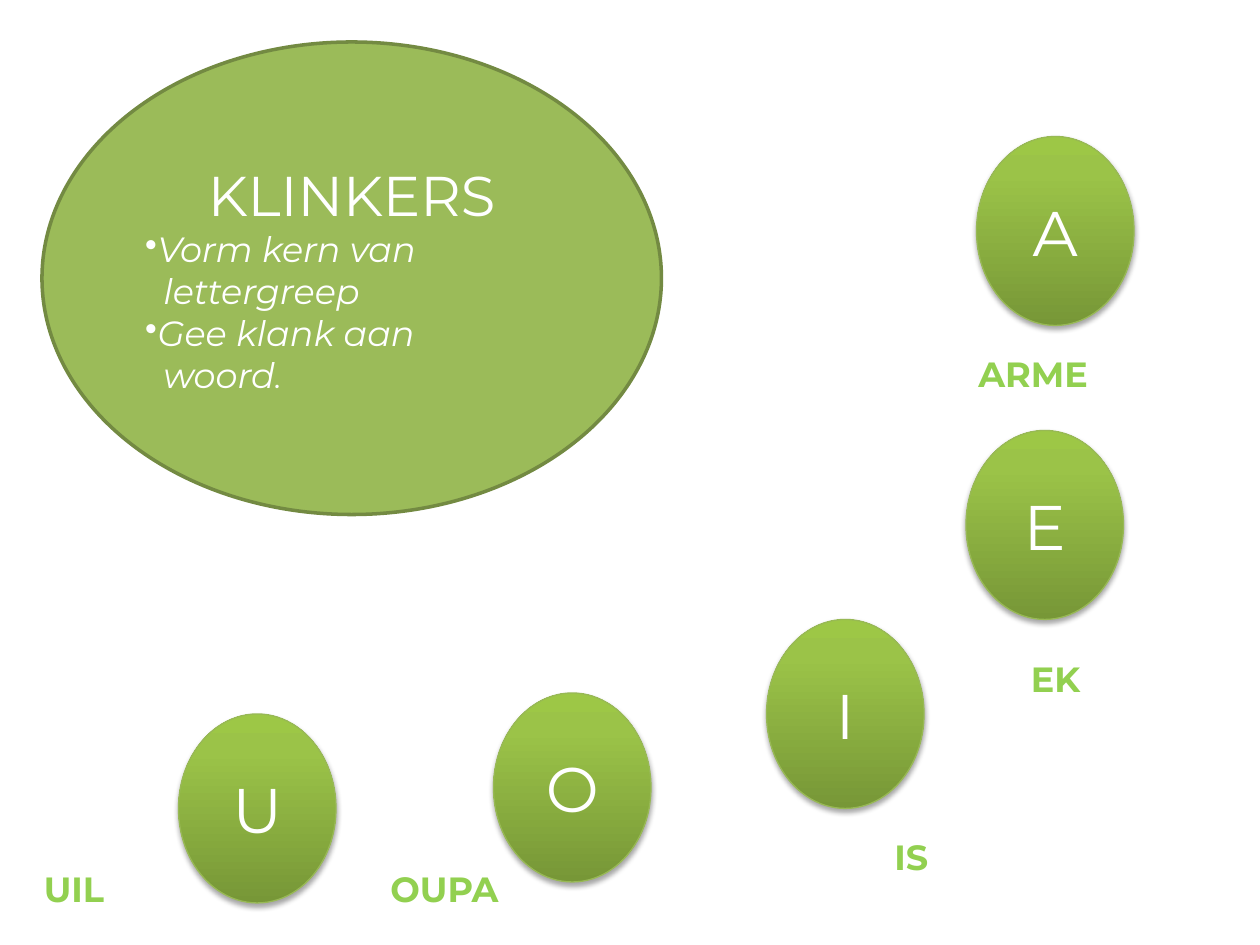
from lxml import etree
from pptx import Presentation
from pptx.dml.color import RGBColor
from pptx.enum import shapes, text
from pptx.oxml import ns, parse_xml
from pptx.util import Pt

COLORS = {
    "oval": "9BBB59", "oval_line": "738A42", "ball_line": "98B955",
    "white": "FFFFFF", "word": "92D050", "shadow": "000000",
    "dark": "779737", "mid": "9BC348", "light": "9DC746",
}
FONT = "Montserrat"
BALL_W, BALL_H = 90, 108
WORD_H = 31.5

# letter, left, top of its ball; word, left, top, width of its label
VOWELS = [
    ("A", 558, 78, "ARME", 552, 198, 96),
    ("E", 552, 246, "EK", 582, 372, 48),
    ("I", 438, 354, "IS", 504, 474, 42),
    ("O", 282, 396, "OUPA", 216, 492, 90),
    ("U", 102, 408, "UIL", 18, 492, 72),
]


def rgb(name):
    return RGBColor.from_string(COLORS[name])


def add_text(p, words, size=20, color="white", bold=False, italic=False,
             align=text.PP_ALIGN.LEFT):
    p.alignment = align
    r = p.add_run()
    r.text = words
    r.font.name, r.font.size = FONT, Pt(size)
    r.font.bold, r.font.italic = bold, italic
    r.font.color.rgb = rgb(color)


def add_bullet(p):
    bullet = etree.SubElement(p._p.get_or_add_pPr(), ns.qn("a:buChar"))
    bullet.set("char", "•")


def add_oval(s, kind, box, line, width):
    sp = s.shapes.add_shape(kind, *map(Pt, box))
    sp.line.color.rgb = rgb(line)
    sp.line.width = Pt(width)
    sp.shadow.inherit = False
    tf = sp.text_frame
    tf.word_wrap = True
    tf.vertical_anchor = text.MSO_ANCHOR.MIDDLE
    return sp


def add_heading(s, box):
    sp = add_oval(s, shapes.MSO_SHAPE.OVAL, box, "oval_line", 2)
    sp.fill.solid()
    sp.fill.fore_color.rgb = rgb("oval")
    tf = sp.text_frame
    add_text(tf.paragraphs[0], "KLINKERS", size=32, align=text.PP_ALIGN.CENTER)
    for first, second, stop in (("Vorm kern van", "lettergreep", ""),
                                ("Gee klank aan", "woord", ".")):
        p = tf.add_paragraph()
        add_text(p, first, italic=True)
        add_bullet(p)
        p = tf.add_paragraph()
        add_text(p, second, italic=True)
        p._p.get_or_add_pPr().set("marL", str(Pt(10.5)))
        if stop:
            add_text(p, stop, size=18, italic=True)


def add_gradient(sp):
    sp.fill.gradient()
    sp.fill.gradient_angle = 90
    stops = sp._element.spPr.find(ns.qn("a:gradFill")).find(ns.qn("a:gsLst"))
    for stop in list(stops):
        stops.remove(stop)
    for pos, name in ((0, "dark"), (80, "mid"), (100, "light")):
        stop = etree.SubElement(stops, ns.qn("a:gs"), pos=str(pos * 1000))
        etree.SubElement(stop, ns.qn("a:srgbClr"), val=COLORS[name])


def add_shadow(sp):
    effects = sp._element.spPr.find(ns.qn("a:effectLst"))
    effects.append(parse_xml(
        f'<a:outerShdw {ns.nsdecls("a")} blurRad="{Pt(3.1)}" dist="{Pt(1.8)}" '
        f'dir="5400000" rotWithShape="0"><a:srgbClr val="{COLORS["shadow"]}">'
        '<a:alpha val="35000"/></a:srgbClr></a:outerShdw>'))


def add_ball(s, box, letter):
    sp = add_oval(s, shapes.MSO_SHAPE.FLOWCHART_CONNECTOR, box, "ball_line", 0.75)
    add_gradient(sp)
    add_shadow(sp)
    add_text(sp.text_frame.paragraphs[0], letter, size=36,
             align=text.PP_ALIGN.CENTER)


def add_word(s, box, word):
    tf = s.shapes.add_textbox(*map(Pt, box)).text_frame
    tf.word_wrap = True
    tf.auto_size = text.MSO_AUTO_SIZE.SHAPE_TO_FIT_TEXT
    add_text(tf.paragraphs[0], word, color="word", bold=True)


def main():
    prs = Presentation()
    prs.slide_width, prs.slide_height = Pt(720), Pt(540)
    s = prs.slides.add_slide(prs.slide_layouts[6])

    # Large oval with the heading and its two points
    add_heading(s, (24, 24, 354, 270))

    # Vowel balls, then their example words
    for letter, x, y, *_ in VOWELS:
        add_ball(s, (x, y, BALL_W, BALL_H), letter)
    for *_, word, x, y, w in VOWELS:
        add_word(s, (x, y, w, WORD_H), word)

    prs.save("out.pptx")


if __name__ == "__main__":
    main()
